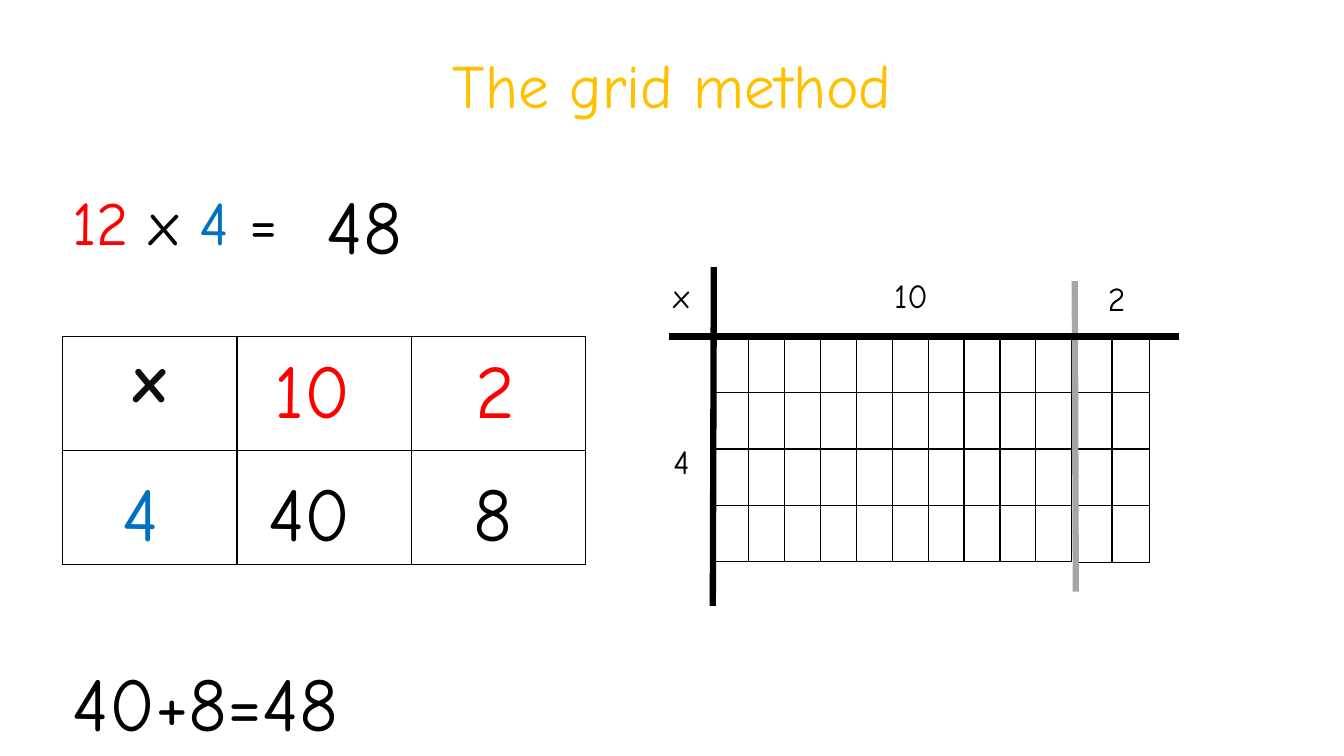
from dataclasses import dataclass

from lxml.etree import SubElement
from pptx import Presentation
from pptx.dml.color import RGBColor
from pptx.enum.shapes import MSO_CONNECTOR
from pptx.enum.text import MSO_ANCHOR, PP_ALIGN
from pptx.oxml.ns import qn
from pptx.util import Inches, Pt


@dataclass(frozen=True)
class Theme:
    font: str = "Comic Neue"
    title: str = "FFC000"
    ink: str = "000000"
    cross: str = "0D0D0D"
    tens_and_ones: str = "FF0000"
    multiplier: str = "0070C0"
    divider: str = "A6A6A6"
    paper: str = "FFFFFF"
    heading_size: int = 44
    cross_size: int = 48
    number_size: int = 54
    label_size: int = 24
    border_width: float = 1
    axis_width: float = 4.5


THEME = Theme()


def write_runs(paragraph, runs, *, size, bold=False, align=PP_ALIGN.LEFT, spacing=None):
    """Fill a paragraph with (text, colour) runs."""
    paragraph.alignment = align
    if spacing:
        paragraph.line_spacing = spacing
    for text, color in runs:
        run = paragraph.add_run()
        run.text = text
        run.font.name = THEME.font
        run.font.size = Pt(size)
        run.font.bold = bold
        run.font.color.rgb = RGBColor.from_string(color)


def add_text(slide, left, top, width, height, runs, *, anchor=MSO_ANCHOR.TOP,
             wrap=True, **text_format):
    box = slide.shapes.add_textbox(Inches(left), Inches(top), Inches(width), Inches(height))
    frame = box.text_frame
    frame.word_wrap = wrap
    frame.vertical_anchor = anchor
    write_runs(frame.paragraphs[0], runs, **text_format)


def set_borders(cell):
    properties = cell._tc.get_or_add_tcPr()
    for position, side in enumerate(("a:lnL", "a:lnR", "a:lnT", "a:lnB")):
        line = SubElement(properties, qn(side), w=str(Pt(THEME.border_width)))
        fill = SubElement(line, qn("a:solidFill"))
        SubElement(fill, qn("a:srgbClr"), val=THEME.ink)
        properties.insert(position, line)


def add_grid(slide, left, top, width, height, rows, columns, *, filled=False):
    """Add an evenly divided, bordered table and return it."""
    frame = slide.shapes.add_table(rows, columns, Inches(left), Inches(top),
                                   Inches(width), Inches(height))
    table = frame.table
    table.first_row = False
    table.horz_banding = False
    for cell in table.iter_cells():
        if filled:
            cell.fill.solid()
            cell.fill.fore_color.rgb = RGBColor.from_string(THEME.paper)
        else:
            cell.fill.background()
        set_borders(cell)
    return table


def add_line(slide, start, end, color):
    line = slide.shapes.add_connector(MSO_CONNECTOR.STRAIGHT,
                                      *(Inches(value) for value in (*start, *end)))
    line.line.color.rgb = RGBColor.from_string(color)
    line.line.width = Pt(THEME.axis_width)
    SubElement(line._element.spPr, qn("a:effectLst"))


def add_multiplication_table(slide):
    table = add_grid(slide, 0.62, 3.34, 5.19, 2.26, 2, 3, filled=True)
    write_runs(table.cell(0, 0).text_frame.paragraphs[0], [("x", THEME.cross)],
               size=THEME.cross_size, bold=True, align=PP_ALIGN.CENTER)

    factor_top, product_top = 3.35, 4.57
    numbers = (
        ("10", 2.62, factor_top, THEME.tens_and_ones),
        ("2", 4.62, factor_top, THEME.tens_and_ones),
        ("4", 1.12, product_top, THEME.multiplier),
        ("40", 2.56, product_top, THEME.ink),
        ("8", 4.6, product_top, THEME.ink),
    )
    for number, left, top, color in numbers:
        add_text(slide, left, top, 1.29, 1.01, [(number, color)],
                 size=THEME.number_size)


def add_area_model(slide):
    add_grid(slide, 7.07, 3.34, 3.56, 2.23, 4, 10)
    add_grid(slide, 10.66, 3.33, 0.74, 2.25, 4, 2)
    add_line(slide, (10.66, 2.79), (10.67, 5.87), THEME.divider)
    add_line(slide, (11.69, 3.34), (6.64, 3.34), THEME.ink)
    add_line(slide, (7.07, 6.01), (7.08, 2.65), THEME.ink)
    labels = (
        ("x", 6.58, 2.68, 0.4),
        ("10", 8.77, 2.68, 0.56),
        ("2", 10.89, 2.71, 0.41),
        ("4", 6.58, 4.33, 0.41),
    )
    for label, left, top, width in labels:
        add_text(slide, left, top, width, 0.5, [(label, THEME.ink)],
                 size=THEME.label_size, wrap=False)


def main():
    presentation = Presentation()
    presentation.slide_width = Inches(13.33)
    presentation.slide_height = Inches(7.5)
    slide = presentation.slides.add_slide(presentation.slide_layouts[6])

    add_text(slide, 0.92, 0.32, 11.5, 1.11, [("The grid method", THEME.title)],
             size=THEME.heading_size, align=PP_ALIGN.CENTER, spacing=0.9,
             anchor=MSO_ANCHOR.MIDDLE)
    equation = [("12 ", THEME.tens_and_ones), ("x ", THEME.ink),
                ("4 ", THEME.multiplier), ("=", THEME.ink)]
    add_text(slide, 0.62, 1.86, 2.5, 0.8, equation,
             size=THEME.heading_size, spacing=0.9)
    add_text(slide, 3.14, 1.73, 1.29, 1.01, [("48", THEME.ink)], size=THEME.number_size)
    add_multiplication_table(slide)
    add_area_model(slide)
    add_text(slide, 0.62, 6.46, 5.19, 1.01, [("40+8=48", THEME.ink)],
             size=THEME.number_size)

    presentation.save("out.pptx")


if __name__ == "__main__":
    main()
